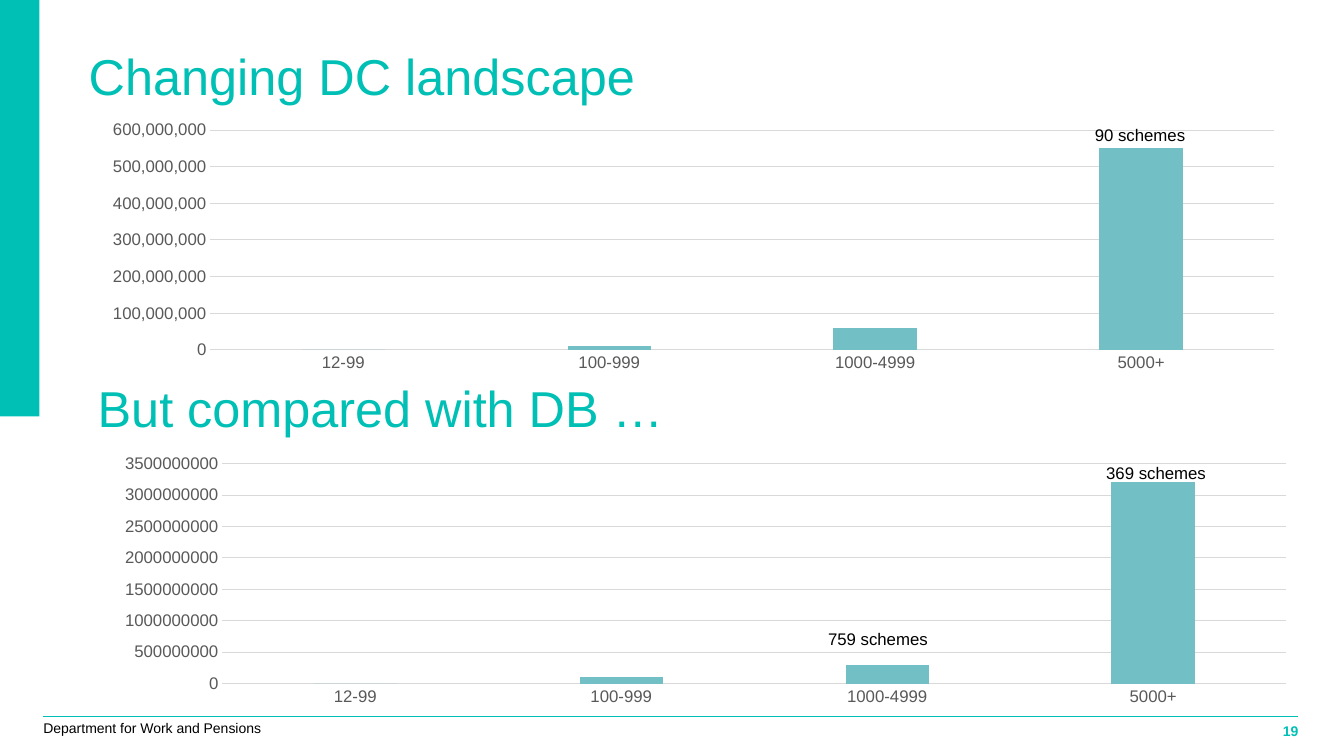
from lxml.etree import SubElement
from pptx import Presentation
from pptx.chart.data import CategoryChartData
from pptx.dml.color import RGBColor
from pptx.enum.chart import XL_CHART_TYPE, XL_TICK_MARK
from pptx.enum.shapes import MSO_CONNECTOR, MSO_SHAPE
from pptx.enum.text import PP_ALIGN
from pptx.oxml.ns import qn
from pptx.util import Pt

COLORS = {
    name: RGBColor.from_string(value)
    for name, value in {
        "teal": "00C0B5",
        "bar": "72BFC5",
        "axis text": "595959",
        "grid": "D9D9D9",
        "black": "000000",
    }.items()
}
FONT = "Arial"


def style_font(font, size, color):
    font.name = FONT
    font.size = Pt(size)
    font.color.rgb = COLORS[color]


def add_text(text, left, top, width, height, size, color,
             align=PP_ALIGN.LEFT, wrap=True, inset=(0, 0)):
    """Add a one-paragraph text box and return its paragraph."""
    frame = slide.shapes.add_textbox(
        Pt(left), Pt(top), Pt(width), Pt(height)).text_frame
    frame.word_wrap = wrap
    frame.margin_left = frame.margin_right = Pt(inset[0])
    frame.margin_top = frame.margin_bottom = Pt(inset[1])
    paragraph = frame.paragraphs[0]
    paragraph.text = text
    paragraph.alignment = align
    style_font(paragraph.font, size, color)
    return paragraph


presentation = Presentation()
presentation.slide_width = Pt(960)
presentation.slide_height = Pt(540)
slide = presentation.slides.add_slide(presentation.slide_layouts[6])

# Side band and footer
band = slide.shapes.add_shape(MSO_SHAPE.RECTANGLE, 0, 0, Pt(28.2), Pt(297.4))
band.shadow.inherit = False
band.fill.solid()
band.fill.fore_color.rgb = COLORS["teal"]
band.line.fill.background()

footer_line = slide.shapes.add_connector(
    MSO_CONNECTOR.STRAIGHT, Pt(31), Pt(512), Pt(927.4), Pt(512))
footer_line.line.color.rgb = COLORS["teal"]
footer_line.line.width = Pt(0.75)
SubElement(footer_line._element.spPr, qn("a:effectLst"))

page_number = add_text("19", 874, 514.8, 53.4, 11.5, 10, "teal", PP_ALIGN.RIGHT)
page_number.font.bold = True
page_number.line_spacing = 1.1
add_text("Department for Work and Pensions", 31, 514, 157, 12, 10, "black",
         wrap=False)

# Headings
add_text("Changing DC landscape", 63.4, 32.4, 864, 79.2, 36, "teal")
add_text("But compared with DB …", 69.8, 269.3, 864, 79.2, 36, "teal")

# Charts: left, top, number format, axis maximum, axis step, values
categories = ["12-99", "100-999", "1000-4999", "5000+"]
charts = [
    (63.4, 82.8, "#,##0", 600_000_000, 100_000_000,
     [0, 10_000_000, 60_000_000, 550_000_000]),
    (72, 321.1, "General", 3_500_000_000, 500_000_000,
     [0, 100_000_000, 300_000_000, 3_200_000_000]),
]
for left, top, number_format, maximum, step, values in charts:
    chart_data = CategoryChartData()
    chart_data.categories = categories
    chart_data.add_series("Series 1", values)
    chart = slide.shapes.add_chart(
        XL_CHART_TYPE.COLUMN_CLUSTERED,
        Pt(left), Pt(top), Pt(864), Pt(186.5), chart_data).chart
    chart.has_title = False
    chart.has_legend = False
    style_font(chart.font, 10, "black")

    plot = chart.plots[0]
    plot.vary_by_categories = False
    plot.gap_width = 219
    plot.overlap = -27
    bar_fill = plot.series[0].format.fill
    bar_fill.solid()
    bar_fill.fore_color.rgb = COLORS["bar"]

    for axis in (chart.category_axis, chart.value_axis):
        axis.major_tick_mark = axis.minor_tick_mark = XL_TICK_MARK.NONE
        style_font(axis.tick_labels.font, 12, "axis text")

    value_axis = chart.value_axis
    value_axis.minimum_scale = 0
    value_axis.maximum_scale = maximum
    value_axis.major_unit = step
    value_axis.tick_labels.number_format = number_format
    value_axis.tick_labels.number_format_is_linked = False
    value_axis.format.line.fill.background()
    for line in (chart.category_axis.format.line,
                 value_axis.major_gridlines.format.line):
        line.color.rgb = COLORS["grid"]
        line.width = Pt(0.75)

# Scheme counts above the bars
for text, left, top in [("369 schemes", 780.5, 326.9),
                        ("90 schemes", 769, 85.7),
                        ("759 schemes", 581.8, 445.7)]:
    add_text(text, left, top, 90.7, 21.6, 12, "black", PP_ALIGN.CENTER,
             inset=(7.2, 3.6))

presentation.save("out.pptx")
